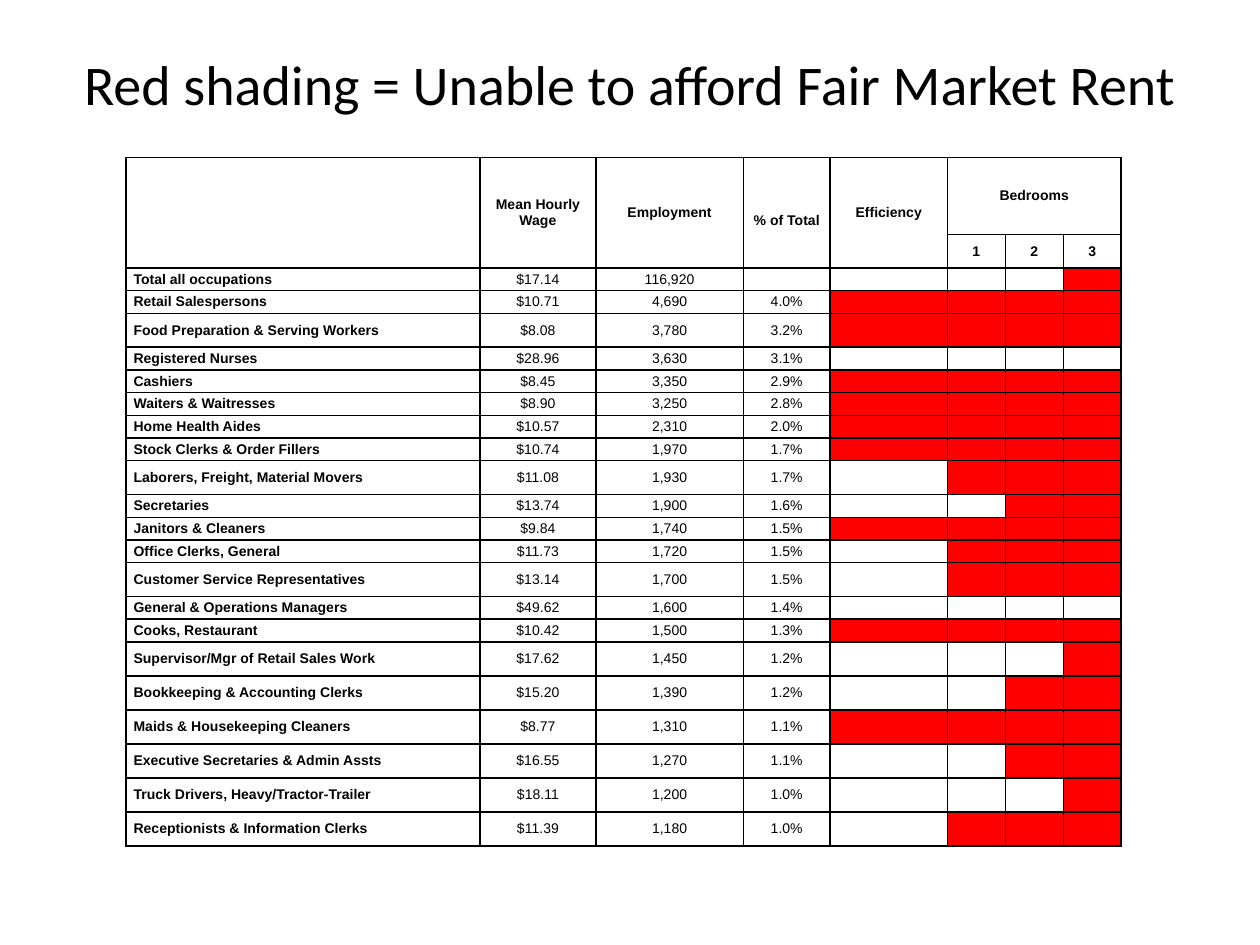
from dataclasses import dataclass
from lxml.etree import SubElement
from pptx import Presentation
from pptx.dml.color import RGBColor as Rgb
from pptx.enum.text import MSO_ANCHOR as Anchor, PP_ALIGN as Align
from pptx.oxml.ns import qn
from pptx.util import Inches, Pt


@dataclass(frozen=True)
class Theme:
    ink: str = "000000"
    red: str = "FF0000"
    head: str = "Calibri"
    body: str = "Arial"
    big: int = 32
    small: int = 8
    line: int = 1


LOOK = Theme()
WIDE, HIGH = 10, 7.5
TITLE = "Red shading = Unable to afford Fair Market Rent"
HEADS = ["", "Mean Hourly Wage", "Employment", "% of Total", "Efficiency", "Bedrooms"]
ROOMS = ["1", "2", "3"]
COLS = [2.81, 0.92, 1.17, 0.69, 0.93, 0.46, 0.46, 0.46]
TOP, SUB, LOW, TALL = 0.61, 0.25, 0.18, 0.27
DROP = 0.13

# name, wage, jobs, share, red cells from the right, row height
JOBS = [
    ("Total all occupations", "$17.14", "116,920", "", 1, LOW),
    ("Retail Salespersons", "$10.71", "4,690", "4.0%", 4, LOW),
    ("Food Preparation & Serving Workers", "$8.08", "3,780", "3.2%", 4, TALL),
    ("Registered Nurses", "$28.96", "3,630", "3.1%", 0, LOW),
    ("Cashiers", "$8.45", "3,350", "2.9%", 4, LOW),
    ("Waiters & Waitresses", "$8.90", "3,250", "2.8%", 4, LOW),
    ("Home Health Aides", "$10.57", "2,310", "2.0%", 4, LOW),
    ("Stock Clerks & Order Fillers", "$10.74", "1,970", "1.7%", 4, LOW),
    ("Laborers, Freight, Material Movers", "$11.08", "1,930", "1.7%", 3, TALL),
    ("Secretaries", "$13.74", "1,900", "1.6%", 2, LOW),
    ("Janitors & Cleaners", "$9.84", "1,740", "1.5%", 4, LOW),
    ("Office Clerks, General", "$11.73", "1,720", "1.5%", 3, LOW),
    ("Customer Service Representatives", "$13.14", "1,700", "1.5%", 3, TALL),
    ("General & Operations Managers", "$49.62", "1,600", "1.4%", 0, LOW),
    ("Cooks, Restaurant", "$10.42", "1,500", "1.3%", 4, LOW),
    ("Supervisor/Mgr of Retail Sales Work", "$17.62", "1,450", "1.2%", 1, TALL),
    ("Bookkeeping & Accounting Clerks", "$15.20", "1,390", "1.2%", 2, TALL),
    ("Maids & Housekeeping Cleaners", "$8.77", "1,310", "1.1%", 4, TALL),
    ("Executive Secretaries & Admin Assts", "$16.55", "1,270", "1.1%", 2, TALL),
    ("Truck Drivers, Heavy/Tractor-Trailer", "$18.11", "1,200", "1.0%", 1, TALL),
    ("Receptionists & Information Clerks", "$11.39", "1,180", "1.0%", 3, TALL),
]


def write(frame, text, size=LOOK.small, font=LOOK.body, bold=False, align=Align.CENTER):
    para = frame.paragraphs[0]
    para.alignment = align
    if not text:
        para._p.get_or_add_endParaRPr().set("sz", str(size * 100))
        return
    run = para.add_run()
    run.text = text
    run.font.size, run.font.name, run.font.bold = Pt(size), font, bold
    run.font.color.rgb = Rgb.from_string(LOOK.ink)


def frame_cell(cell):
    cell.vertical_anchor = Anchor.MIDDLE
    cell.margin_left = cell.margin_right = Inches(0.06)
    cell.margin_top = cell.margin_bottom = 0
    props = cell._tc.get_or_add_tcPr()
    for side in ("lnL", "lnR", "lnT", "lnB"):
        edge = SubElement(props, qn(f"a:{side}"), w=str(Pt(LOOK.line)))
        fill = SubElement(edge, qn("a:solidFill"))
        SubElement(fill, qn("a:srgbClr"), val=LOOK.ink)
    cell.fill.background()


def add_title(slide):
    spot = (WIDE / 20, HIGH / 30, WIDE * 0.9, HIGH * 0.11)
    frame = slide.shapes.add_textbox(*map(Inches, spot)).text_frame
    frame.word_wrap = True
    frame.vertical_anchor = Anchor.MIDDLE
    write(frame, TITLE, size=LOOK.big, font=LOOK.head)


def add_grid(slide):
    rows = [TOP, SUB] + [job[-1] for job in JOBS]
    spot = (WIDE / 10, HIGH / 6, sum(COLS), sum(rows))
    grid = slide.shapes.add_table(len(rows), len(COLS), *map(Inches, spot)).table
    grid.first_row = grid.horz_banding = False
    for col, size in zip(grid.columns, COLS):
        col.width = Inches(size)
    for row, size in zip(grid.rows, rows):
        row.height = Inches(size)
    for cell in grid.iter_cells():
        frame_cell(cell)

    last = len(COLS) - 1
    room = len(HEADS) - 1
    pad = [""] * (last - room)
    words = [HEADS + pad, [""] * room + ROOMS]
    words += [list(job[:4]) + [""] * 4 for job in JOBS]
    for r, line in enumerate(words):
        for c, text in enumerate(line):
            side = Align.LEFT if c == 0 else Align.CENTER
            write(grid.cell(r, c).text_frame, text, bold=r < 2 or c == 0, align=side)

    for c in range(room):
        grid.cell(0, c).merge(grid.cell(1, c))
    grid.cell(0, room).merge(grid.cell(0, last))
    grid.cell(0, HEADS.index("% of Total")).margin_top = Inches(DROP)

    for r, job in enumerate(JOBS, 2):
        for c in range(len(COLS) - job[4], len(COLS)):
            fill = grid.cell(r, c).fill
            fill.solid()
            fill.fore_color.rgb = Rgb.from_string(LOOK.red)


def main():
    deck = Presentation()
    deck.slide_width, deck.slide_height = Inches(WIDE), Inches(HIGH)
    slide = deck.slides.add_slide(deck.slide_layouts[6])
    add_title(slide)
    add_grid(slide)
    deck.save("out.pptx")


if __name__ == "__main__":
    main()
